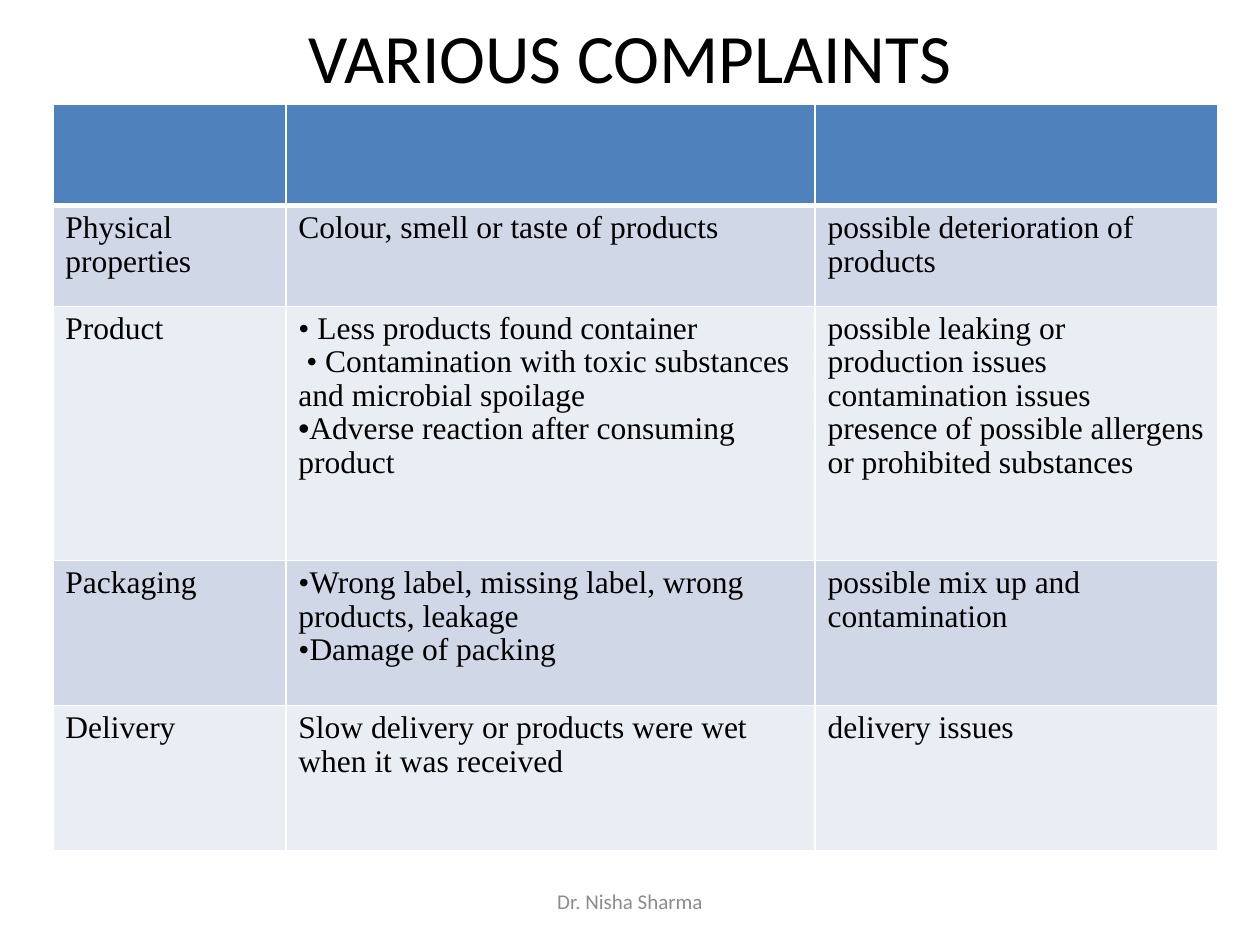
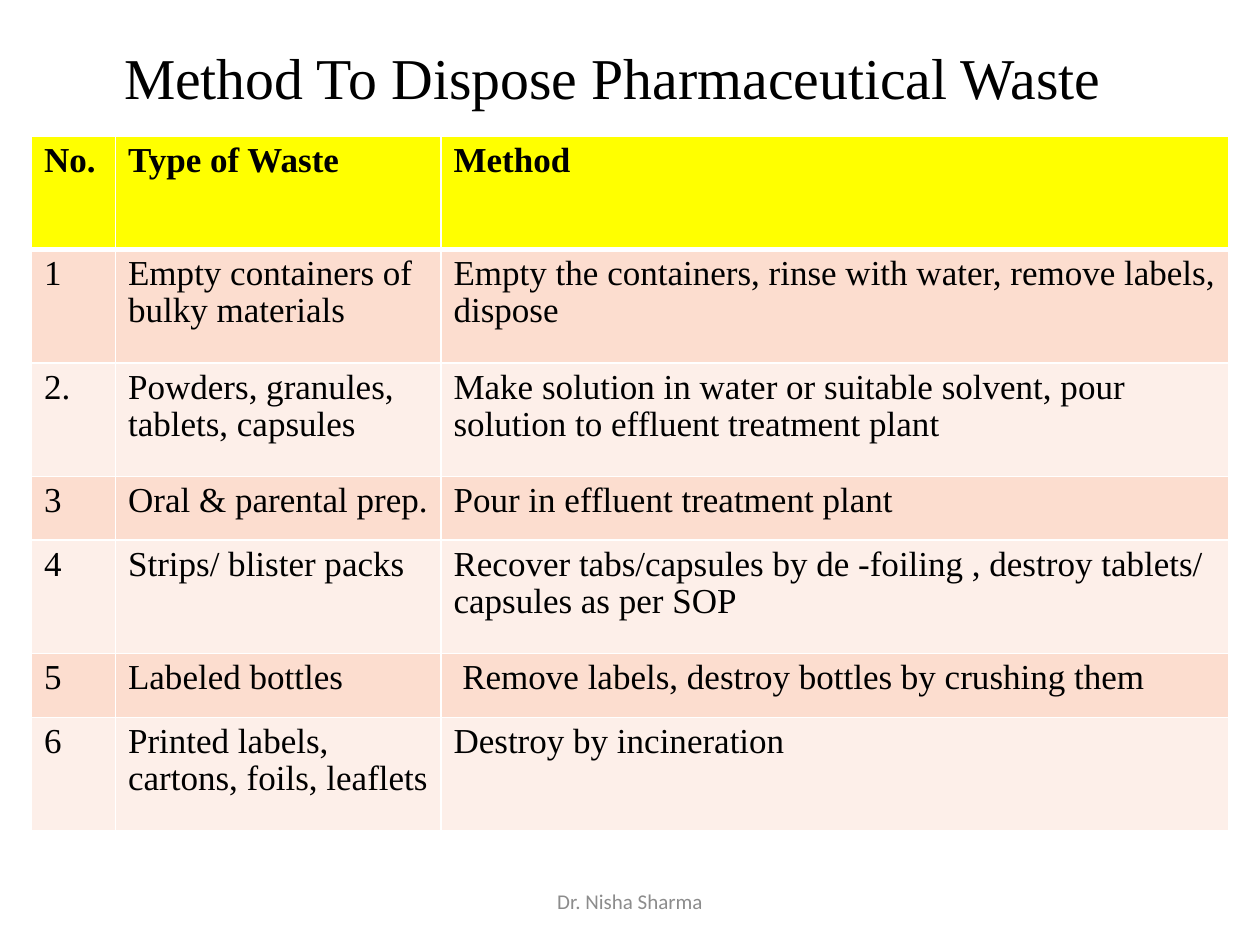
from lxml import etree
from pptx import Presentation
from pptx import util as u
from pptx.dml.color import RGBColor
from pptx.enum import text
from pptx.oxml.ns import qn

Pt = u.Pt
SLIDE_W, SLIDE_H = 720, 540
BLACK, WHITE, GREY = "000000", "FFFFFF", "8C8C8C"
SERIF, SANS = "Times New Roman", "Calibri"
FOOTER = "Dr. Nisha Sharma"
FOOTER_BOX = (246, 500.4, 228, 28.8)
BULLET = "•"
TABLE_SPACING = 0.96

COMPLAINTS = {
    "title": "VARIOUS COMPLAINTS",
    "title_box": (36, 12.2, 648, 39.6),
    "title_font": {"name": SANS, "size": Pt(39.6)},
    "table_at": (30.2, 59.8),
    "cols": [133.2, 302.4, 230.4],
    "rows": [57.6, 57.6, 145.4, 82.8, 82.8],
    "size": 18,
    "fills": ("4F81BD", "D0D8E8", "E9EDF4"),
    "cells": [
        ["", "", ""],
        ["Physical properties", "Colour, smell or taste of products",
         "possible deterioration of products"],
        ["Product",
         "• Less products found container\n"
         " • Contamination with toxic substances and microbial spoilage\n"
         "*Adverse reaction after consuming product",
         "possible leaking or production issues contamination issues\n"
         "presence of possible allergens or prohibited substances"],
        ["Packaging",
         "•Wrong label, missing label, wrong products, leakage\n"
         "•Damage of packing",
         "possible mix up and contamination"],
        ["Delivery", "Slow delivery or products were wet when it was received",
         "delivery issues"],
    ],
}

WASTE = {
    "title": "Method To Dispose Pharmaceutical Waste ",
    "title_box": (30.2, 23.8, 648, 39.6),
    "title_font": {"name": SERIF, "size": Pt(33)},
    "table_at": (18, 77.8),
    "cols": [48, 186, 450],
    "rows": [64.8, 64.8, 64.8, 36.5, 64.8, 36.5, 64.8],
    "size": 20,
    "fills": ("FFFF00", "FCDDCF", "FDEFE9"),
    "cells": [
        ["No.", "Type of Waste", "Method"],
        ["1", "Empty containers of bulky materials",
         "Empty the containers, rinse with water, remove labels, dispose"],
        ["2.", "Powders, granules, tablets, capsules",
         "Make solution in water or suitable solvent, pour solution to effluent treatment plant"],
        ["3", "Oral & parental prep.", "Pour in effluent treatment plant"],
        ["4", "Strips/ blister packs",
         "Recover tabs/capsules by de -foiling , destroy tablets/ capsules as per SOP"],
        ["5", "Labeled bottles", " Remove labels, destroy bottles by crushing them"],
        ["6", "Printed labels, cartons, foils, leaflets", "Destroy by incineration"],
    ],
}


def rgb(value):
    return RGBColor.from_string(value)


def add_run(p, words, color, **font):
    r = p.add_run()
    r.text = words
    r.font.color.rgb = rgb(color)
    for name, value in font.items():
        setattr(r.font, name, value)


def add_centred_text(s, box, words, color, **font):
    tf = s.shapes.add_textbox(*map(Pt, box)).text_frame
    frame = {"word_wrap": True, "vertical_anchor": text.MSO_ANCHOR.MIDDLE,
             "margin_left": 0, "margin_right": 0, "margin_top": 0, "margin_bottom": 0}
    for name, value in frame.items():
        setattr(tf, name, value)
    p = tf.paragraphs[0]
    p.alignment = text.PP_ALIGN.CENTER
    add_run(p, words, color, **font)


def add_bullet(p):
    pPr = p._p.get_or_add_pPr()
    etree.SubElement(pPr, qn("a:buFont"), typeface="Arial")
    etree.SubElement(pPr, qn("a:buChar"), char=BULLET)


def set_borders(cell, widths):
    """Draw white borders; widths maps the sides L, R, T, B to points."""
    tcPr = cell._tc.get_or_add_tcPr()
    for side, width in widths.items():
        ln = etree.SubElement(tcPr, qn(f"a:ln{side}"), w=str(Pt(width)))
        fill = etree.SubElement(ln, qn("a:solidFill"))
        etree.SubElement(fill, qn("a:srgbClr"), val=WHITE)


def fill_cell(cell, words, row, fills, size):
    """Format one cell: a header in row 0, alternating bands below it."""
    set_borders(cell, {"L": 1, "R": 1, "T": 3 if row == 1 else 1, "B": 3 if row == 0 else 1})
    cell.fill.solid()
    cell.fill.fore_color.rgb = rgb(fills[0] if row == 0 else fills[2 - row % 2])
    tf = cell.text_frame
    for i, line in enumerate(words.split("\n") if words else []):
        p = tf.add_paragraph() if i else tf.paragraphs[0]
        p.line_spacing = TABLE_SPACING
        if line.startswith("*"):
            add_bullet(p)
            line = line[1:]
        add_run(p, line, BLACK, name=SERIF, size=Pt(size), bold=row == 0)


def add_banded_table(s, at, cols, rows, cells, fills, size):
    box = (*at, sum(cols), sum(rows))
    table = s.shapes.add_table(len(rows), len(cols), *map(Pt, box)).table
    for column, width in zip(table.columns, cols):
        column.width = Pt(width)
    for i, height in enumerate(rows):
        table.rows[i].height = Pt(height)
        for j, words in enumerate(cells[i]):
            fill_cell(table.cell(i, j), words, i, fills, size)


def add_table_slide(prs, content):
    s = prs.slides.add_slide(prs.slide_layouts[6])
    add_centred_text(s, content["title_box"], content["title"], BLACK, **content["title_font"])
    add_banded_table(s, content["table_at"], content["cols"], content["rows"],
                     content["cells"], content["fills"], content["size"])
    add_centred_text(s, FOOTER_BOX, FOOTER, GREY, name=SANS, size=Pt(12))


def main():
    prs = Presentation()
    prs.slide_width, prs.slide_height = Pt(SLIDE_W), Pt(SLIDE_H)
    for content in (COMPLAINTS, WASTE):
        add_table_slide(prs, content)
    prs.save("out.pptx")


if __name__ == "__main__":
    main()
